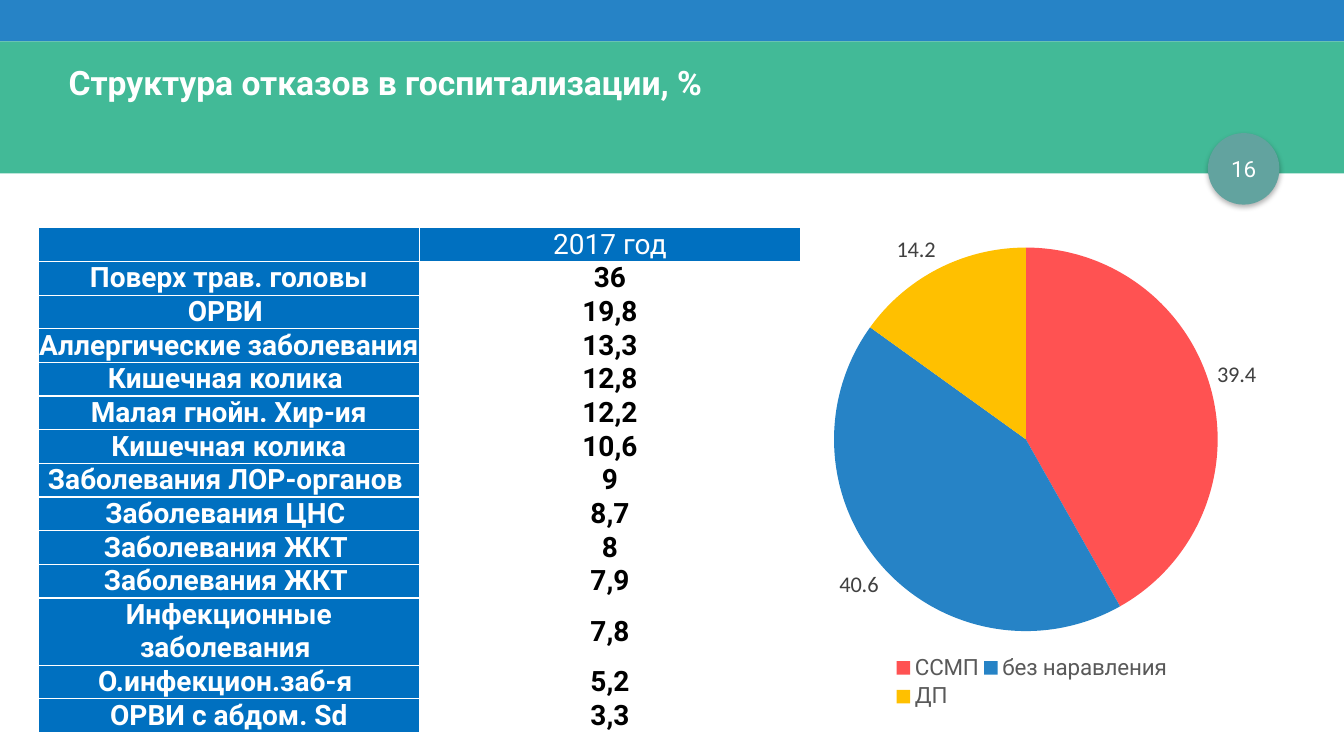
"""Build the slide on the structure of hospitalisation refusals."""
import pptx
import pptx.chart.data
import pptx.dml.color
import pptx.enum.chart
import pptx.enum.shapes
import pptx.enum.text
import pptx.oxml
import pptx.oxml.ns
import pptx.util

Inches, Pt = pptx.util.Inches, pptx.util.Pt
ALIGN = pptx.enum.text.PP_ALIGN
MIDDLE = pptx.enum.text.MSO_ANCHOR.MIDDLE
SHAPE = pptx.enum.shapes.MSO_SHAPE
NS = pptx.oxml.ns.nsdecls("a", "c")


def rgb(value):
    """Return the colour for a hex string."""
    return pptx.dml.color.RGBColor.from_string(value)


def write(tf, text, size=20, color="FFFFFF", bold=False, align=ALIGN.CENTER, spacing=None):
    """Write one formatted paragraph into a text frame."""
    p = tf.paragraphs[0]
    p.alignment = align
    p.line_spacing = spacing
    r = p.add_run()
    r.text = text
    r.font.name = "Roboto"
    r.font.size = Pt(size)
    r.font.bold = bold
    r.font.color.rgb = rgb(color)


prs = pptx.Presentation()
prs.slide_width, prs.slide_height = Inches(13.33), Inches(7.5)
s = prs.slides.add_slide(prs.slide_layouts[5])

backdrop = [
    (SHAPE.RECTANGLE, 0, 0, 13.33, 0.41, "2683C6"),
    (SHAPE.RECTANGLE, 0, 0.41, 13.33, 1.31, "42BA97"),
    (SHAPE.OVAL, 11.98, 1.32, 0.71, 0.71, "62A39F"),
]
for kind, x, y, w, h, color in backdrop:
    sp = s.shapes.add_shape(kind, Inches(x), Inches(y), Inches(w), Inches(h))
    sp.shadow.inherit = False
    sp.fill.solid()
    sp.fill.fore_color.rgb = rgb(color)
    sp.line.fill.background()
effects = sp._element.spPr.find(pptx.oxml.ns.qn("a:effectLst"))
effects.append(pptx.oxml.parse_xml(
    f'<a:outerShdw {NS} blurRad="{Pt(4)}" dist="{Pt(2)}" dir="5400000" algn="t" rotWithShape="0">'
    '<a:srgbClr val="000000"><a:alpha val="30000"/></a:srgbClr></a:outerShdw>'))

title = s.shapes.title
title.left, title.top, title.width, title.height = (Inches(v) for v in (0.58, 0.61, 12.28, 0.47))
tf = title.text_frame
tf.vertical_anchor = pptx.enum.text.MSO_ANCHOR.TOP
tf.auto_size = pptx.enum.text.MSO_AUTO_SIZE.NONE
write(tf, "Структура отказов в госпитализации, %", size=24, bold=True, align=ALIGN.LEFT, spacing=0.9)
s.shapes._spTree.append(title._element)

number = s.shapes.add_textbox(Inches(11.94), Inches(1.47), Inches(0.79), Inches(0.4))
tf = number.text_frame
tf.word_wrap = True
tf.vertical_anchor = MIDDLE
write(tf, "16", size=16)

rows = [
    ("", "2017 год"),
    ("Поверх трав. головы", "36"),
    ("ОРВИ ", "19,8"),
    ("Аллергические заболевания ", "13,3"),
    ("Кишечная колика ", "12,8"),
    ("Малая гнойн. Хир-ия", "12,2"),
    ("Кишечная колика", "10,6"),
    ("Заболевания ЛОР-органов ", "9"),
    ("Заболевания ЦНС ", "8,7"),
    ("Заболевания ЖКТ ", "8"),
    ("Заболевания ЖКТ ", "7,9"),
    ("Инфекционные заболевания ", "7,8"),
    ("О.инфекцион.заб-я ", "5,2"),
    ("ОРВИ с абдом. Sd", "3,3"),
]
frame = s.shapes.add_table(len(rows), 2, Inches(0.38), Inches(2.26), Inches(7.56), Inches(0.24 * len(rows)))
table = frame.table
table.first_row = table.horz_banding = False
for i, row in enumerate(rows):
    table.rows[i].height = Inches(0.24)
    for j, text in enumerate(row):
        cell = table.cell(i, j)
        cell.margin_left = cell.margin_right = cell.margin_top = cell.margin_bottom = 0
        cell.vertical_anchor = MIDDLE
        tcPr = cell._tc.get_or_add_tcPr()
        for side in ("lnL", "lnR", "lnT", "lnB"):
            tcPr.append(pptx.oxml.parse_xml(
                f'<a:{side} {NS} w="{Pt(1)}"><a:solidFill><a:srgbClr val="FFFFFF"/></a:solidFill></a:{side}>'))
        blue = i == 0 or j == 0
        if blue:
            cell.fill.solid()
            cell.fill.fore_color.rgb = rgb("0070C0")
        else:
            cell.fill.background()
        if text:
            write(cell.text_frame, text, color="FFFFFF" if blue else "000000", bold=i > 0)

data = pptx.chart.data.CategoryChartData()
data.categories = ["ССМП", "без наравления ", "ДП"]
data.add_series("Series 1", (39.4, 40.6, 14.2))
chart = s.shapes.add_chart(pptx.enum.chart.XL_CHART_TYPE.PIE, Inches(7.42), Inches(2.1),
                           Inches(5.68), Inches(5.02), data).chart
chart.has_title = False
chart.font.name = "Calibri"
chart.font.size = Pt(10)
chart.font.color.rgb = rgb("000000")

plot = chart.plots[0]
plot.vary_by_categories = True
for i, color in enumerate(("FF5252", "2683C6", "FFC000")):
    fill = plot.series[0].points[i].format.fill
    fill.solid()
    fill.fore_color.rgb = rgb(color)
plot.has_data_labels = True
labels = plot.data_labels
labels.show_value = True
labels.show_percentage = False
labels.position = pptx.enum.chart.XL_LABEL_POSITION.OUTSIDE_END
labels.font.name = "Calibri"
labels.font.size = Pt(16)
labels.font.color.rgb = rgb("404040")

chart.has_legend = True
legend = chart.legend
legend.position = pptx.enum.chart.XL_LEGEND_POSITION.BOTTOM
legend.include_in_layout = False
legend.font.name = "Roboto"
legend.font.size = Pt(16)
legend.font.color.rgb = rgb("595959")

layouts = [
    (chart._chartSpace.chart.plotArea, 0, '<c:layoutTarget val="inner"/>', (0.15, 0.07, 0.67, 0.76)),
    (legend._element, 1, "", (0.25, 0.87, 0.5, 0.12)),
]
for parent, index, target, (x, y, w, h) in layouts:
    for old in parent.findall(pptx.oxml.ns.qn("c:layout")):
        parent.remove(old)
    parent.insert(index, pptx.oxml.parse_xml(
        f'<c:layout {NS}><c:manualLayout>{target}<c:xMode val="edge"/><c:yMode val="edge"/>'
        f'<c:x val="{x}"/><c:y val="{y}"/><c:w val="{w}"/><c:h val="{h}"/></c:manualLayout></c:layout>'))

prs.save("out.pptx")
